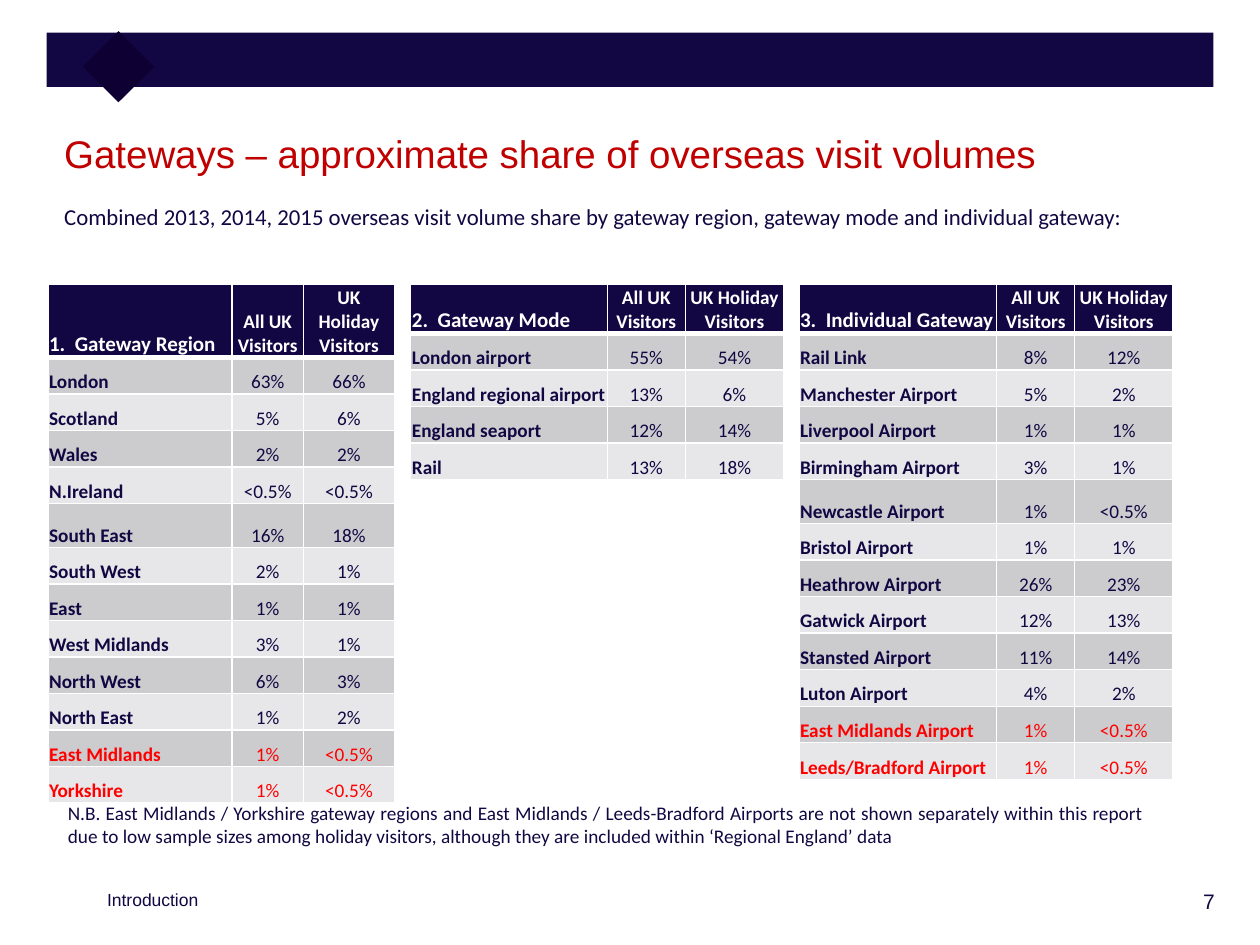
from lxml import etree
from pptx import Presentation
from pptx import util as u
from pptx.dml.color import RGBColor
from pptx.enum import shapes, text
from pptx.oxml.ns import qn

NAVY, DARK, RED, ALERT = "120742", "0E0033", "C00000", "FF0000"
WHITE, BANDS = "FFFFFF", ("CCCCCF", "E7E7E9")
HEADER_H, ROW_H, TALL_H, TALL_ROW = 0.38, 0.29, 0.35, 5
TABLE_TOP = 2.26
LEFT, CENTER = text.PP_ALIGN.LEFT, text.PP_ALIGN.CENTER
RIGHT, JUSTIFY = text.PP_ALIGN.RIGHT, text.PP_ALIGN.JUSTIFY
TOP, MIDDLE = text.MSO_ANCHOR.TOP, text.MSO_ANCHOR.MIDDLE

REGIONS = [
    ("London", "63%", "66%"), ("Scotland", "5%", "6%"),
    ("Wales", "2%", "2%"), ("N.Ireland", "<0.5%", "<0.5%"),
    ("South East", "16%", "18%"), ("South West", "2%", "1%"),
    ("East", "1%", "1%"), ("West Midlands", "3%", "1%"),
    ("North West", "6%", "3%"), ("North East", "1%", "2%"),
    ("East Midlands", "1%", "<0.5%"), ("Yorkshire", "1%", "<0.5%"),
]
MODES = [
    ("London airport", "55%", "54%"),
    ("England regional airport", "13%", "6%"),
    ("England seaport", "12%", "14%"), ("Rail", "13%", "18%"),
]
GATEWAYS = [
    ("Rail Link", "8%", "12%"), ("Manchester Airport", "5%", "2%"),
    ("Liverpool Airport", "1%", "1%"), ("Birmingham Airport", "3%", "1%"),
    ("Newcastle Airport", "1%", "<0.5%"), ("Bristol Airport", "1%", "1%"),
    ("Heathrow Airport", "26%", "23%"), ("Gatwick Airport", "12%", "13%"),
    ("Stansted Airport", "11%", "14%"), ("Luton Airport", "4%", "2%"),
    ("East Midlands Airport", "1%", "<0.5%"),
    ("Leeds/Bradford Airport", "1%", "<0.5%"),
]
LOW_SAMPLE = {"East Midlands", "Yorkshire",
              "East Midlands Airport", "Leeds/Bradford Airport"}


def rgb(value):
    return RGBColor.from_string(value)


class Deck:
    def __init__(self):
        self.prs = Presentation()
        self.prs.slide_width, self.prs.slide_height = u.Inches(10), u.Inches(7.5)
        self.s = self.prs.slides.add_slide(self.prs.slide_layouts[3])

    def add_words(self, tf, words, color, align, size, name="Calibri", bold=False):
        p = tf.paragraphs[0]
        p.alignment, p.space_before = align, u.Pt(0)
        r = p.add_run()
        r.text = words
        for key, value in dict(size=u.Pt(size), name=name, bold=bold).items():
            setattr(r.font, key, value)
        r.font.color.rgb = rgb(color)

    def bar(self, box, color, rotation=0):
        sp = self.s.shapes.add_shape(shapes.MSO_SHAPE.RECTANGLE, *map(u.Inches, box))
        sp.shadow.inherit = False
        sp.fill.solid()
        sp.fill.fore_color.rgb = rgb(color)
        sp.line.fill.background()
        sp.rotation = rotation

    def fit(self, sp, box, words, color, align, size, name="Calibri", anchor=TOP):
        """Place a text shape and fill it with one paragraph."""
        for key, value in zip(("left", "top", "width", "height"), box):
            setattr(sp, key, u.Inches(value))
        tf = sp.text_frame
        tf.word_wrap, tf.auto_size = True, text.MSO_AUTO_SIZE.NONE
        tf.vertical_anchor = anchor
        self.add_words(tf, words, color, align, size, name)
        return tf

    def textbox(self, box, *args, **style):
        self.fit(self.s.shapes.add_textbox(0, 0, 0, 0), box, *args, **style)

    def title(self, box, *args, **style):
        tf = self.fit(self.s.shapes.title, box, *args, **style)
        tf.margin_top = u.Inches(0.08)

    def body(self, index, box, *args, **style):
        """Fill a body placeholder with unbulleted text."""
        tf = self.fit(self.s.placeholders[index], box, *args, **style)
        pPr = tf.paragraphs[0]._p.get_or_add_pPr()
        pPr.set("marL", "0")
        pPr.set("indent", "0")
        etree.SubElement(pPr, qn("a:buNone"))

    def borders(self, cell, bottom):
        tcPr = cell._tc.get_or_add_tcPr()
        for side, width in zip("LRTB", (1, 1, 1, bottom)):
            ln = etree.SubElement(tcPr, qn(f"a:ln{side}"), w=str(u.Pt(width)))
            fill = etree.SubElement(ln, qn("a:solidFill"))
            etree.SubElement(fill, qn("a:srgbClr"), val=WHITE)

    def cell(self, cell, words, fill, color, align, size, bold, bottom=1):
        self.borders(cell, bottom)
        cell.fill.solid()
        cell.fill.fore_color.rgb = rgb(fill)
        cell.vertical_anchor = text.MSO_ANCHOR.BOTTOM
        for side, gap in dict(left=0.01, top=0.01, right=0.01, bottom=0).items():
            setattr(cell, f"margin_{side}", u.Inches(gap))
        self.add_words(cell.text_frame, words, color, align, size, bold=bold)

    def table(self, left, widths, heading, rows):
        heights = [HEADER_H] + [TALL_H if i == TALL_ROW else ROW_H
                                for i in range(1, len(rows) + 1)]
        box = (left, TABLE_TOP, sum(widths), sum(heights))
        tbl = self.s.shapes.add_table(len(heights), len(widths),
                                      *map(u.Inches, box)).table
        tbl.horz_banding = False
        for col, width in zip(tbl.columns, widths):
            col.width = u.Inches(width)
        for row, height in zip(tbl.rows, heights):
            row.height = u.Inches(height)
        for j, words in enumerate((heading, "All UK Visitors", "UK Holiday Visitors")):
            self.cell(tbl.cell(0, j), words, NAVY, WHITE, CENTER if j else LEFT,
                      11 if j else 12, True, bottom=3)
        for i, row in enumerate(rows):
            color = ALERT if row[0] in LOW_SAMPLE else NAVY
            for j, words in enumerate(row):
                self.cell(tbl.cell(i + 1, j), words, BANDS[i % 2], color,
                          CENTER if j else LEFT, 11, j == 0)


def main():
    d = Deck()
    d.bar((0.37, 0.26, 9.26, 0.43), NAVY)
    d.bar((0.74, 0.33, 0.4, 0.4), DARK, rotation=45)
    d.title((0.41, 0.95, 9.21, 0.61),
            "Gateways – approximate share of overseas visit volumes",
            RED, LEFT, 22, name="Arial")
    d.body(1, (0.41, 1.56, 9.21, 5.27),
           "Combined 2013, 2014, 2015 overseas visit volume share by gateway "
           "region, gateway mode and individual gateway:", NAVY, JUSTIFY, 13)
    d.body(2, (0.75, 6.99, 2.67, 0.3), "Introduction", NAVY, LEFT, 10,
           name="Arial", anchor=MIDDLE)
    d.table(0.38, (1.46, 0.57, 0.72), "1.  Gateway Region", REGIONS)
    d.table(3.26, (1.56, 0.62, 0.78), "2.  Gateway Mode", MODES)
    d.table(6.34, (1.57, 0.62, 0.78), "3.  Individual Gateway", GATEWAYS)
    d.textbox((0.44, 6.31, 8.74, 0.47),
              "N.B. East Midlands / Yorkshire gateway regions and East Midlands / "
              "Leeds-Bradford Airports are not shown separately within this report "
              "due to low sample sizes among holiday visitors, although they are "
              "included within ‘Regional England’ data", NAVY, JUSTIFY, 11)
    d.textbox((8.53, 7, 1.21, 0.36), "7", NAVY, RIGHT, 12, name="Arial")
    d.prs.save("out.pptx")


if __name__ == "__main__":
    main()
